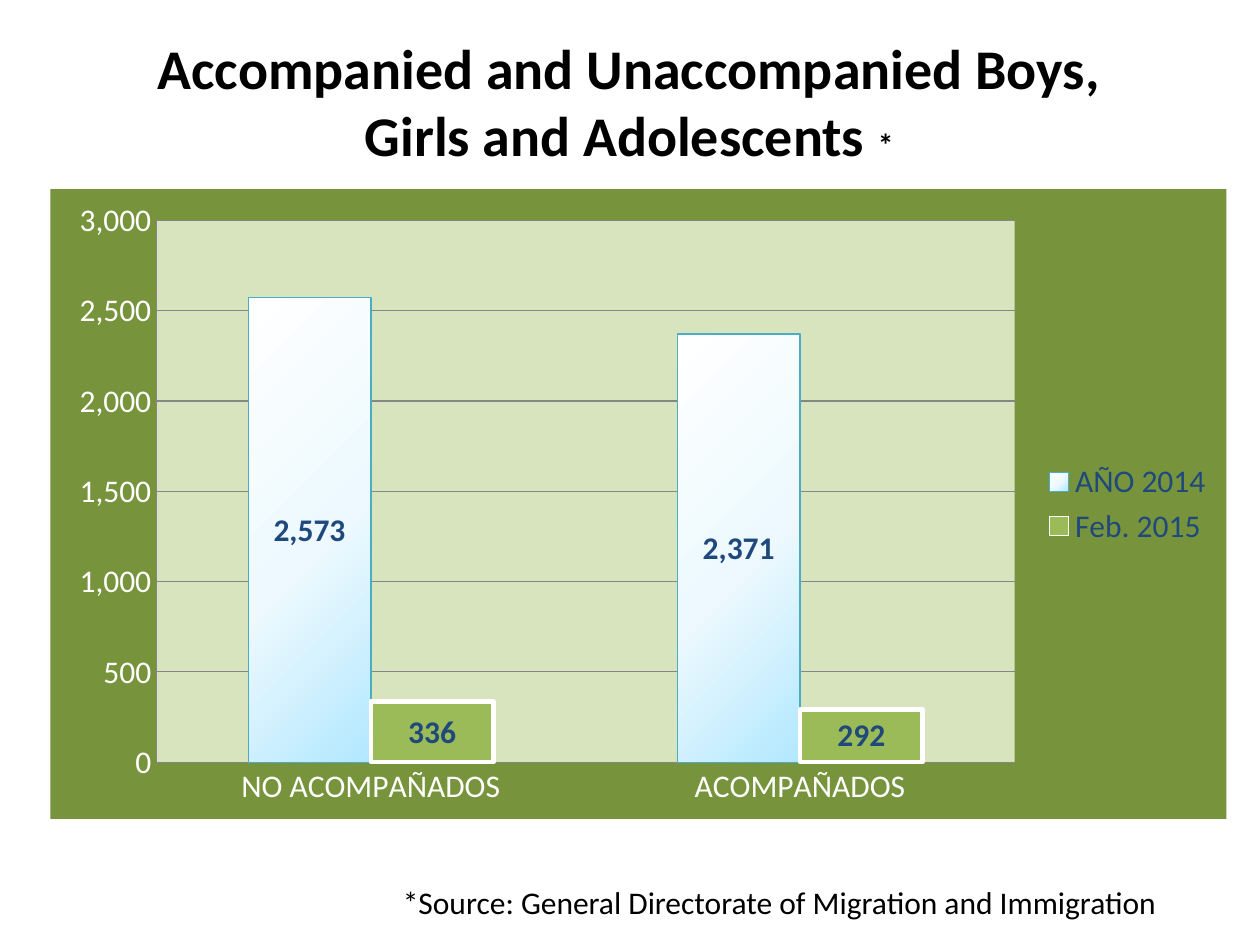
from lxml import etree
from pptx import Presentation
from pptx.chart.data import CategoryChartData
from pptx.dml.color import RGBColor
from pptx.enum.chart import (XL_CHART_TYPE, XL_LABEL_POSITION as LabelPos,
                             XL_LEGEND_POSITION as LegendPos, XL_TICK_MARK as Tick)
from pptx.enum.text import MSO_ANCHOR as Anchor, PP_ALIGN as Align
from pptx.oxml import parse_xml
from pptx.oxml.ns import nsdecls, qn
from pptx.util import Pt

FONT = "Calibri"
BLACK = RGBColor(0x00, 0x00, 0x00)
WHITE = RGBColor(0xFF, 0xFF, 0xFF)
NAVY = RGBColor(0x1F, 0x49, 0x7D)
TEAL = RGBColor(0x4B, 0xAC, 0xC6)
LEAF = RGBColor(0x9B, 0xBB, 0x59)
MOSS = RGBColor(0x77, 0x93, 0x3C)
PALE_GREEN = RGBColor(0xD7, 0xE4, 0xBD)
GRAY = RGBColor(0x86, 0x86, 0x86)
ICE_STOPS = [(0, RGBColor(0xFE, 0xFF, 0xFF)), (55, RGBColor(0xED, 0xF9, 0xFE)),
             (100, RGBColor(0xB2, 0xE8, 0xFF))]

CATEGORIES = ["NO ACOMPAÑADOS", "ACOMPAÑADOS"]
YEAR_2014 = ("AÑO 2014", (2573, 2371))
FEB_2015 = ("Feb. 2015", (336, 292))


def style_font(font, size=18, color=BLACK, bold=False):
    font.name, font.size, font.bold = FONT, Pt(size), bold
    font.color.rgb = color


def add_text(paragraph, text, align=Align.LEFT, **style):
    paragraph.alignment = align
    run = paragraph.add_run()
    run.text = text
    style_font(run.font, **style)


def place(part, box):
    part.left, part.top, part.width, part.height = (Pt(v) for v in box)


def build_title(slide, box):
    title = slide.shapes.title
    place(title, box)
    frame = title.text_frame
    frame.word_wrap, frame.vertical_anchor = True, Anchor.MIDDLE
    heading = frame.paragraphs[0]
    add_text(heading, "Accompanied and Unaccompanied Boys, Girls and Adolescents ",
             Align.CENTER, size=32, bold=True)
    add_text(heading, "*", Align.CENTER, bold=True)


def area_fill(color):
    return parse_xml(f'<c:spPr {nsdecls("c", "a")}><a:solidFill><a:srgbClr val="{color}"/>'
                     '</a:solidFill><a:ln><a:noFill/></a:ln></c:spPr>')


def fill_chart_areas(chart):
    chart_space = chart._chartSpace
    chart_space.find(qn("c:chart")).addnext(area_fill(MOSS))
    chart_space.chart.plotArea.append(area_fill(PALE_GREEN))


def fix_plot_position(chart, x, y, w, h):
    """Pin the inner plot area; values are fractions of the chart."""
    plot_area = chart._chartSpace.chart.plotArea
    for old in plot_area.findall(qn("c:layout")):
        plot_area.remove(old)
    layout = parse_xml(f'<c:layout {nsdecls("c")}><c:manualLayout/></c:layout>')
    settings = [("layoutTarget", "inner"), ("xMode", "edge"), ("yMode", "edge"),
                ("x", x), ("y", y), ("w", w), ("h", h)]
    for tag, value in settings:
        etree.SubElement(layout[0], qn(f"c:{tag}")).set("val", str(value))
    plot_area.insert(0, layout)


def apply_ice_gradient(series):
    series.format.fill.solid()
    stops = "".join(f'<a:gs pos="{pos * 1000}"><a:srgbClr val="{color}"/></a:gs>'
                    for pos, color in ICE_STOPS)
    gradient = parse_xml(
        f'<a:gradFill {nsdecls("a")} rotWithShape="1"><a:gsLst>{stops}</a:gsLst>'
        '<a:path path="circle"><a:fillToRect l="-40000" t="-90000" r="140000" b="190000"/>'
        '</a:path></a:gradFill>')
    properties = series._element.find(qn("c:spPr"))
    properties.replace(properties.find(qn("a:solidFill")), gradient)


def style_series(series, line_color, line_width):
    series.invert_if_negative = False
    series.format.line.color.rgb = line_color
    series.format.line.width = Pt(line_width)
    labels = series.data_labels
    labels.show_value = True
    labels.position = LabelPos.CENTER
    labels.number_format, labels.number_format_is_linked = "#,##0", False
    style_font(labels.font, color=NAVY, bold=True)


def style_axes(chart):
    for axis in (chart.category_axis, chart.value_axis):
        axis.major_tick_mark = axis.minor_tick_mark = Tick.NONE
        axis.format.line.color.rgb = GRAY
        style_font(axis.tick_labels.font, color=WHITE)
    values = chart.value_axis
    values.minimum_scale, values.maximum_scale, values.major_unit = 0, 3000, 500
    values.tick_labels.number_format = "#,##0"
    values.tick_labels.number_format_is_linked = False
    values.major_gridlines.format.line.color.rgb = GRAY


def build_chart(slide, box):
    data = CategoryChartData(number_format="#,##0")
    data.categories = CATEGORIES
    for name, counts in (YEAR_2014, FEB_2015):
        data.add_series(name, counts)
    chart = slide.shapes.add_chart(XL_CHART_TYPE.COLUMN_CLUSTERED,
                                   *(Pt(v) for v in box), data).chart
    style_font(chart.font)
    chart.has_title = False
    chart.has_legend = True
    chart.legend.position = LegendPos.RIGHT
    chart.legend.include_in_layout = False
    style_font(chart.legend.font, color=NAVY)

    plot = chart.plots[0]
    plot.gap_width, plot.overlap, plot.vary_by_categories = 150, 0, False
    year_2014, feb_2015 = plot.series
    style_series(year_2014, TEAL, 0.75)
    apply_ice_gradient(year_2014)
    style_series(feb_2015, WHITE, 2.5)
    feb_2015.format.fill.solid()
    feb_2015.format.fill.fore_color.rgb = LEAF

    style_axes(chart)
    fill_chart_areas(chart)
    fix_plot_position(chart, 0.09, 0.05, 0.73, 0.86)


def build_source_note(slide, box):
    note = slide.shapes.add_textbox(*(Pt(v) for v in box))
    note.text_frame.word_wrap = True
    add_text(note.text_frame.paragraphs[0],
             "*Source: General Directorate of Migration and Immigration", Align.RIGHT)


def main():
    deck = Presentation()
    deck.slide_width, deck.slide_height = Pt(720), Pt(540)
    slide = deck.slides.add_slide(deck.slide_layouts[5])
    build_title(slide, (67, 15, 585, 85))
    build_chart(slide, (28.8, 108, 672, 360))
    build_source_note(slide, (183, 501, 485, 29))
    deck.save("out.pptx")


if __name__ == "__main__":
    main()
